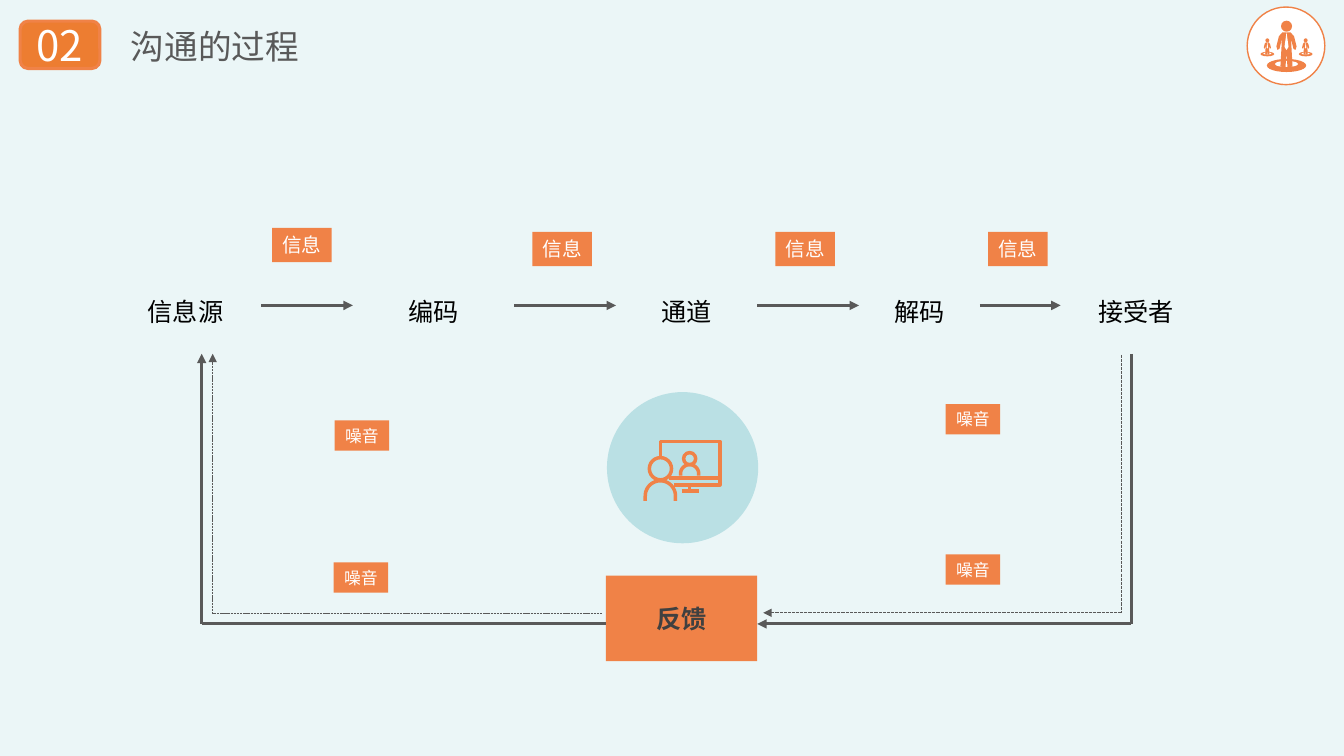
"""Build a slide on the process of communication."""
from dataclasses import dataclass
from itertools import pairwise
from math import cos, pi, sin
from typing import Optional

from lxml.etree import SubElement
from pptx import Presentation
from pptx.dml.color import RGBColor as RGB
from pptx.enum.dml import MSO_LINE as Dash
from pptx.enum.shapes import MSO_CONNECTOR as Link, MSO_SHAPE as Kind
from pptx.enum.text import MSO_ANCHOR as Anchor, PP_ALIGN as Align
from pptx.oxml.ns import qn
from pptx.util import Inches, Pt

PALE = RGB(0xEB, 0xF6, 0xF7)
TEAL = RGB(0xBA, 0xE0, 0xE4)
ORANGE = RGB(0xF0, 0x82, 0x47)
BADGE = RGB(0xED, 0x7D, 0x31)
GREY = RGB(0x59, 0x59, 0x59)
DARK = RGB(0x40, 0x40, 0x40)
BLACK = RGB(0, 0, 0)
WHITE = RGB(0xFF, 0xFF, 0xFF)
NOTO = "Noto Sans CJK SC"
ROBOTO = "Roboto Condensed"

Point = tuple[float, float]


@dataclass
class Stage:
    text: str
    left: float
    width: float


@dataclass
class Tag:
    text: str
    left: float
    top: float
    width: float
    height: float
    size: int
    font: str


@dataclass
class Path:
    start: Point
    end: Point
    weight: float = 2.25
    dash: bool = False
    head: bool = False


STAGES = [
    Stage("信息源", 1.09, 1.5),
    Stage("编码", 3.5, 1.6),
    Stage("通道", 6.11, 1.4),
    Stage("解码", 8.52, 1.2),
    Stage("接受者", 10.52, 1.5),
]
TAGS = [
    Tag("信息", x, y, 0.59, 0.34, 14, NOTO)
    for x, y in [(2.7, 2.26), (5.28, 2.3), (7.69, 2.3), (9.8, 2.3)]
] + [
    Tag("噪音", x, y, 0.54, 0.3, 12, ROBOTO)
    for x, y in [(3.32, 4.17), (9.38, 4.01), (3.31, 5.58), (9.38, 5.5)]
]
LOOPS = [
    Path((6.01, 6.19), (2, 6.19)),
    Path((5.97, 6.09), (2.11, 6.09), 0.5, True),
    Path((2, 6.19), (2, 3.51), head=True),
    Path((2.11, 6.09), (2.11, 3.51), 0.5, True, True),
    Path((11.22, 3.51), (11.22, 6.19)),
    Path((11.12, 3.52), (11.12, 6.08), 0.75, True),
    Path((11.22, 6.19), (7.51, 6.19), head=True),
    Path((11.12, 6.08), (7.57, 6.08), 0.75, True, True),
]
BODY = [(0.04, 0.06), (0.075, 0.1), (0.1, 0.2), (0.09, 0.235), (0.07, 0.225),
        (0.045, 0.125), (0.05, 0.22), (0.06, 0.4), (0.01, 0.41), (0, 0.265)]
TIE = [(0, 0.06), (0.02, 0.205), (0, 0.235)]

deck = Presentation()
deck.slide_width, deck.slide_height = Inches(13.33), Inches(7.5)
shapes = deck.slides.add_slide(deck.slide_layouts[6]).shapes


def paint(shape, fill: Optional[RGB], line: Optional[RGB], weight: float):
    shape.shadow.inherit = False
    if fill is None:
        shape.fill.background()
    else:
        shape.fill.solid()
        shape.fill.fore_color.rgb = fill
    if line is None:
        shape.line.fill.background()
    else:
        shape.line.color.rgb = line
        shape.line.width = Pt(weight)
    return shape


def block(kind: Kind, left: float, top: float, width: float, height: float,
          fill: Optional[RGB] = None, line: Optional[RGB] = None, weight: float = 1):
    shape = shapes.add_shape(kind, *map(Inches, (left, top, width, height)))
    return paint(shape, fill, line, weight)


def disc(mid: Point, wide: float, high: float, fill: Optional[RGB] = None,
         line: Optional[RGB] = None, weight: float = 1):
    return block(Kind.OVAL, mid[0] - wide, mid[1] - high, 2 * wide, 2 * high,
                 fill, line, weight)


def trace(dots: list[Point], fill: Optional[RGB] = None,
          line: Optional[RGB] = None, weight: float = 1):
    first, *rest = [(Inches(x), Inches(y)) for x, y in dots]
    pen = shapes.build_freeform(*first)
    pen.add_line_segments(rest, close=fill is not None)
    return paint(pen.convert_to_shape(), fill, line, weight)


def label(left: float, top: float, width: float, height: float):
    return shapes.add_textbox(*map(Inches, (left, top, width, height)))


def write(shape, text: str, *, size: int, color: RGB, font: str = NOTO,
          bold: bool = False, align: Align = Align.CENTER, wrap: bool = False) -> None:
    frame = shape.text_frame
    frame.word_wrap = wrap
    frame.vertical_anchor = Anchor.MIDDLE
    para = frame.paragraphs[0]
    para.alignment = align
    run = para.add_run()
    run.text = text
    run.font.size = Pt(size)
    run.font.bold = bold
    run.font.color.rgb = color
    run.font.name = font
    SubElement(run._r.get_or_add_rPr(), qn("a:ea")).set("typeface", NOTO)


def join(path: Path) -> None:
    link = shapes.add_connector(Link.STRAIGHT, *map(Inches, path.start + path.end))
    link.line.color.rgb = GREY
    link.line.width = Pt(path.weight)
    if path.dash:
        link.line.dash_style = Dash.SQUARE_DOT
    if path.head:
        SubElement(link.line._get_or_add_ln(), qn("a:tailEnd")).set("type", "triangle")
    SubElement(link._element.spPr, qn("a:effectLst"))


def leader(x: float, y: float, scale: float) -> None:
    def place(half: list[Point]) -> list[Point]:
        full = half + [(-a, b) for a, b in reversed(half)]
        return [(x + a * scale, y + b * scale) for a, b in full]

    base = (x, y + 0.39 * scale)
    disc(base, 0.195 * scale, 0.065 * scale, ORANGE)
    disc((x, y + 0.375 * scale), 0.115 * scale, 0.03 * scale, WHITE)
    disc((x, y), 0.055 * scale, 0.055 * scale, ORANGE)
    trace(place(BODY), ORANGE)
    trace(place(TIE), WHITE)


def viewer(x: float, y: float, head: float, neck: float, span: float,
           foot: float, weight: float) -> None:
    disc((x, y), head, head, line=ORANGE, weight=weight)
    arc = [(x - span * cos(pi * i / 24), neck - span * sin(pi * i / 24))
           for i in range(25)]
    trace([(x - span, foot), *arc, (x + span, foot)], line=ORANGE, weight=weight)


def main() -> None:
    block(Kind.RECTANGLE, 0, 0, 13.33, 7.5, PALE)
    write(label(1.2, 0.21, 2.41, 0.5), "沟通的过程", size=24, color=GREY,
          align=Align.LEFT, wrap=True)
    block(Kind.ROUNDED_RECTANGLE, 0.2, 0.21, 0.79, 0.47, BADGE, ORANGE, 2.25)
    write(label(0.1, 0.14, 0.99, 0.61), "02", size=30, color=WHITE, wrap=True)
    block(Kind.OVAL, 12.37, 0.07, 0.77, 0.77, WHITE, ORANGE)
    for x, y, scale in [(12.76, 0.26, 1), (12.57, 0.4, 0.35), (12.95, 0.4, 0.35)]:
        leader(x, y, scale)
    for stage in STAGES:
        write(label(stage.left, 2.66, stage.width, 0.85), stage.text, size=18,
              color=BLACK, font=ROBOTO)
    for one, two in pairwise(STAGES):
        join(Path((one.left + one.width, 3.03), (two.left, 3.03), head=True))
    write(block(Kind.RECTANGLE, 6.01, 5.71, 1.5, 0.85, ORANGE), "反馈", size=18,
          color=DARK, bold=True)
    for tag in TAGS:
        box = block(Kind.RECTANGLE, tag.left, tag.top, tag.width, tag.height, ORANGE)
        write(box, tag.text, size=tag.size, color=WHITE, font=tag.font)
    block(Kind.OVAL, 6.02, 3.89, 1.5, 1.5, TEAL)
    for dots in [
        [(6.55, 4.53), (6.55, 4.38), (7.14, 4.38), (7.14, 4.81), (6.68, 4.81)],
        [(6.64, 4.74), (7.14, 4.74)],
        [(6.84, 4.81), (6.84, 4.87)],
        [(6.76, 4.87), (6.93, 4.87)],
    ]:
        trace(dots, line=ORANGE, weight=2.5)
    viewer(6.55, 4.65, 0.11, 4.92, 0.15, 4.97, 2.5)
    viewer(6.84, 4.55, 0.06, 4.7, 0.09, 4.72, 2.5)
    for path in LOOPS:
        join(path)
    deck.save("out.pptx")


if __name__ == "__main__":
    main()
